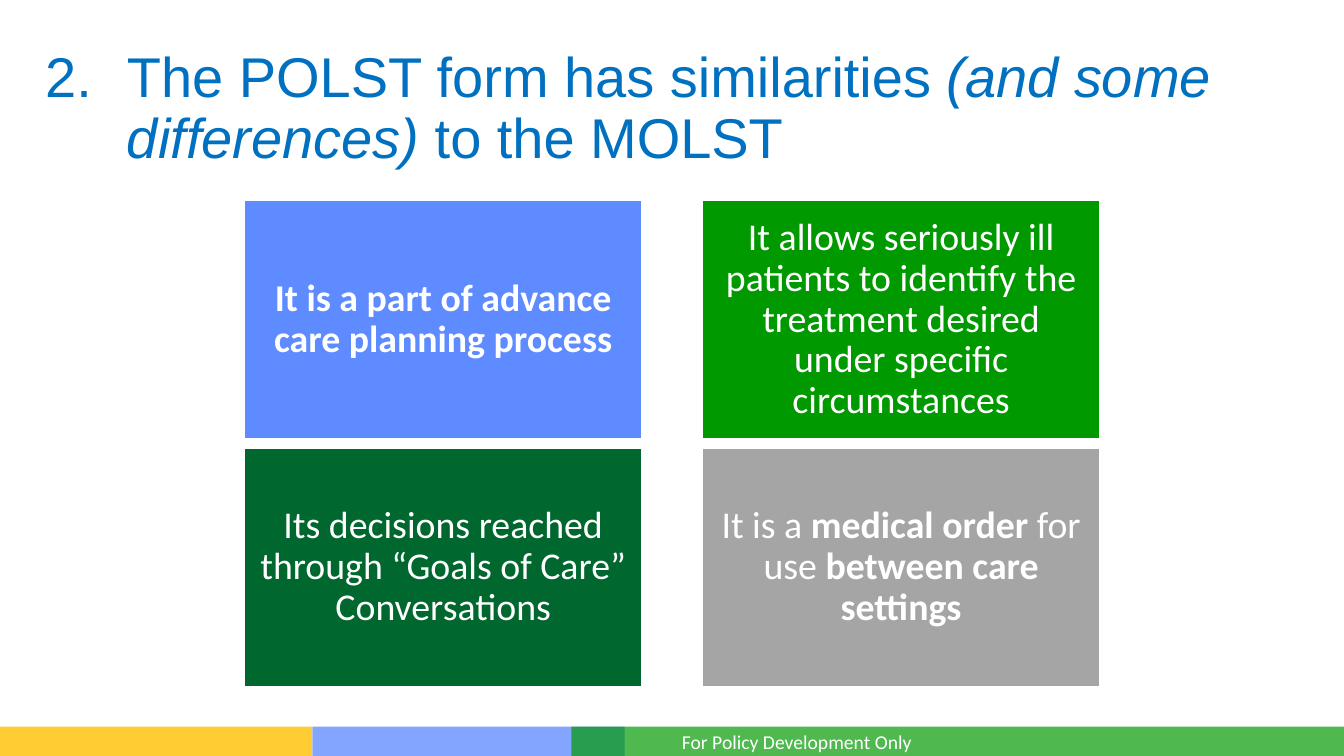
from lxml import etree
from pptx import Presentation
from pptx.dml.color import RGBColor
from pptx.enum.shapes import MSO_SHAPE
from pptx.enum.text import MSO_ANCHOR, PP_ALIGN
from pptx.oxml.ns import qn
from pptx.util import Cm, Pt

RECTANGLE = MSO_SHAPE.RECTANGLE
MIDDLE = MSO_ANCHOR.MIDDLE
CENTER = PP_ALIGN.CENTER

# Text runs: (text, emphasised)
TITLE_NUMBER = 2
TITLE = [
    ("The POLST form has similarities ", False),
    ("(and some differences) ", True),
    ("to the MOLST", False),
]
STATEMENTS = [
    ("blue", [("It is a part of advance care planning process", True)]),
    ("green", [("It allows seriously ill patients to identify the treatment "
                "desired under specific circumstances", False)]),
    ("dark_green", [("Its decisions reached through “Goals of Care” Conversations", False)]),
    ("gray", [("It is a ", False), ("medical order ", True),
              ("for use", False), (" between care settings", True)]),
]
FOOTER = "For Policy Development Only"
# Footer bands: colour, opacity in percent, left, width in cm
BANDS = [
    ("blue", 77, 7.87, 7.87),
    ("yellow", 80, 0, 7.87),
    ("green", 69, 14.4, 19.47),
]

THEME = {
    "colors": {
        "blue": "5E8BFF", "green": "009900", "dark_green": "00682F",
        "gray": "A5A5A5", "yellow": "FFC000", "title": "0070C0", "white": "FFFFFF",
    },
    "title": ("Arial", 40),
    "statement": ("Calibri", 27),
    "footer": ("Calibri", 14),
}

SLIDE_W, SLIDE_H = 33.87, 19.05
BAND_H = 0.74
COLUMNS = 2
GRID_LEFT, GRID_TOP = 6.17, 5.06
TILE_W, TILE_H = 10, 6
GAP_X, GAP_Y = 1.54, 0.24
TILE_INSET = 0.28
TITLE_INDENT = 2.06


def color(name):
    return RGBColor.from_string(THEME["colors"][name])


def add_run(paragraph, text, style, color_name, bold=False, italic=False):
    run = paragraph.add_run()
    run.text = text
    run.font.name, size = THEME[style]
    run.font.size = Pt(size)
    run.font.color.rgb = color(color_name)
    run.font.bold = bold
    run.font.italic = italic


def add_block(slide, left, top, width, height, color_name):
    block = slide.shapes.add_shape(RECTANGLE, Cm(left), Cm(top), Cm(width), Cm(height))
    block.shadow.inherit = False
    block.fill.solid()
    block.fill.fore_color.rgb = color(color_name)
    return block


def add_text_area(slide, left, top, width, height):
    area = slide.shapes.add_textbox(Cm(left), Cm(top), Cm(width), Cm(height))
    area.text_frame.word_wrap = True
    return area.text_frame


def set_opacity(block, percent):
    fill_color = block.fill._xPr.find(qn("a:solidFill"))[0]
    etree.SubElement(fill_color, qn("a:alpha")).set("val", str(percent * 1000))


def set_number(paragraph, start, indent):
    """Number the paragraph automatically, with a hanging indent in cm."""
    properties = paragraph._p.get_or_add_pPr()
    properties.set("marL", str(Cm(indent)))
    properties.set("indent", str(-Cm(indent)))
    number = etree.SubElement(properties, qn("a:buAutoNum"))
    number.set("type", "arabicPeriod")
    number.set("startAt", str(start))


def add_footer(slide):
    for color_name, opacity, left, width in BANDS:
        band = add_block(slide, left, SLIDE_H - BAND_H, width, BAND_H, color_name)
        band.line.fill.background()
        set_opacity(band, opacity)
    frame = add_text_area(slide, SLIDE_W / 2, 18.26, SLIDE_W / 2, 0.86)
    add_run(frame.paragraphs[0], FOOTER, "footer", "white")


def add_title(slide):
    frame = add_text_area(slide, 0.89, 0.74, 32.1, 4.06)
    frame.vertical_anchor = MIDDLE
    heading = frame.paragraphs[0]
    set_number(heading, TITLE_NUMBER, TITLE_INDENT)
    heading.line_spacing = 0.9
    for text, emphasised in TITLE:
        add_run(heading, text, "title", "title", italic=emphasised)


def add_statement(slide, index, color_name, runs):
    row, column = divmod(index, COLUMNS)
    tile = add_block(slide, GRID_LEFT + column * (TILE_W + GAP_X),
                     GRID_TOP + row * (TILE_H + GAP_Y), TILE_W, TILE_H, color_name)
    tile.line.color.rgb = color("white")
    tile.line.width = Pt(1)
    frame = tile.text_frame
    frame.word_wrap = True
    frame.vertical_anchor = MIDDLE
    frame.margin_left = frame.margin_right = Cm(TILE_INSET)
    frame.margin_top = frame.margin_bottom = Cm(TILE_INSET)
    statement = frame.paragraphs[0]
    statement.alignment = CENTER
    statement.line_spacing = 0.9
    for text, emphasised in runs:
        add_run(statement, text, "statement", "white", bold=emphasised)


def main():
    deck = Presentation()
    deck.slide_width, deck.slide_height = Cm(SLIDE_W), Cm(SLIDE_H)
    slide = deck.slides.add_slide(deck.slide_layouts[6])
    add_footer(slide)
    add_title(slide)
    for index, (color_name, runs) in enumerate(STATEMENTS):
        add_statement(slide, index, color_name, runs)
    deck.save("out.pptx")


if __name__ == "__main__":
    main()
